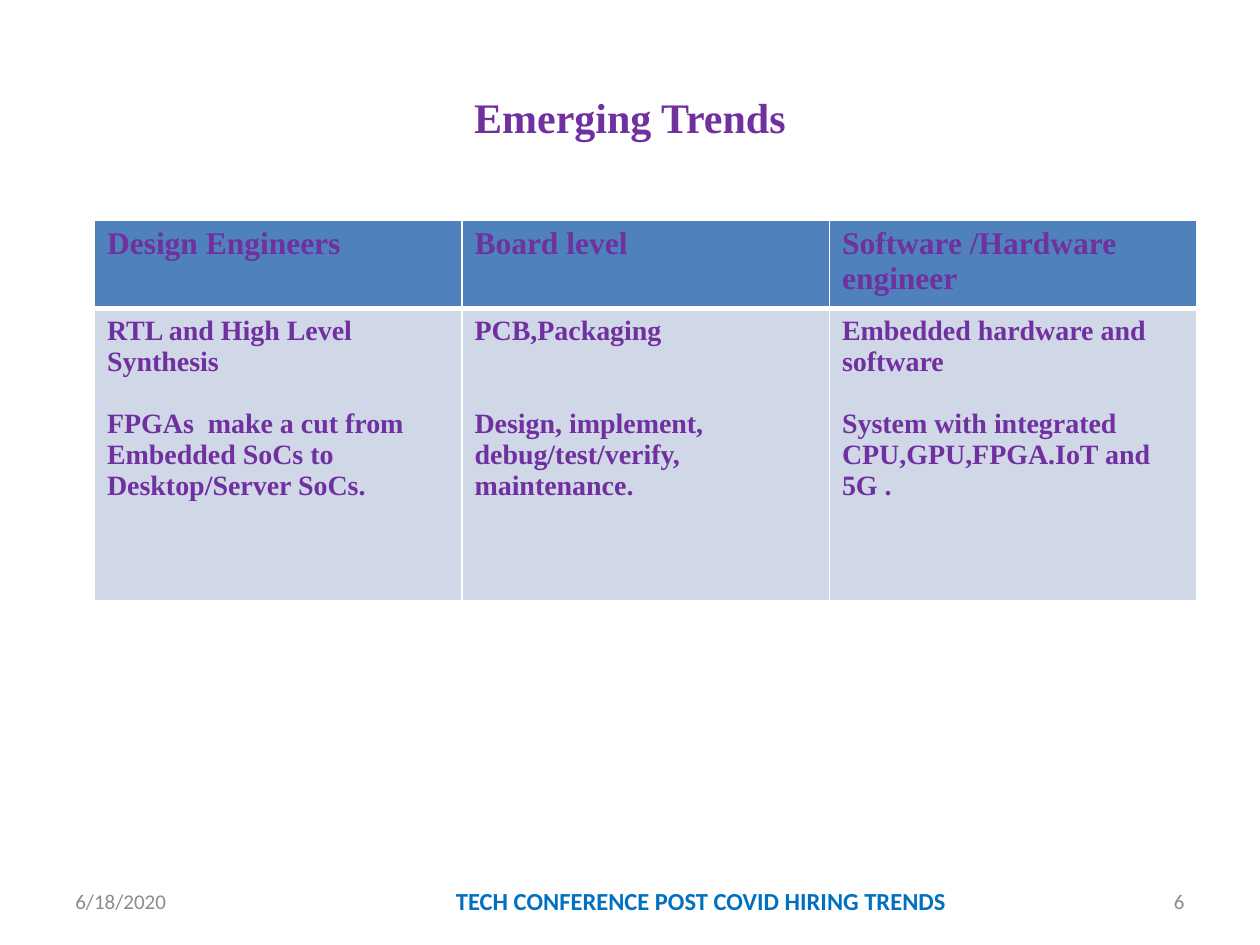
from lxml import etree
from pptx import Presentation
from pptx.dml.color import RGBColor
from pptx.enum.text import MSO_ANCHOR, PP_ALIGN
from pptx.oxml.ns import qn
from pptx.util import Inches, Pt

LEFT, CENTER, RIGHT = PP_ALIGN.LEFT, PP_ALIGN.CENTER, PP_ALIGN.RIGHT
MIDDLE = MSO_ANCHOR.MIDDLE
BLANK_LAYOUT = 6

COLORS = {
    "purple": "7030A0",
    "header": "4F81BD",
    "body": "D0D8E8",
    "border": "FFFFFF",
    "gray": "8C8C8C",
    "blue": "0070C0",
}

FORMATS = {
    "title": {"name": "Times New Roman", "size": Pt(24), "bold": True, "color": "purple"},
    "header": {"name": "Times New Roman", "size": Pt(18), "bold": True, "color": "purple"},
    "body": {"name": "Times New Roman", "size": Pt(16), "bold": True, "color": "purple"},
    "footer": {"name": "Calibri", "size": Pt(12), "bold": False, "color": "gray"},
    "event": {"name": "Calibri", "size": Pt(14), "bold": True, "color": "blue"},
}

# Each column: heading, first topic, second topic, lines of space between topics
BODY_LINE = 17.7
COLUMNS = [
    ("Design Engineers", "RTL and High Level Synthesis",
     "FPGAs  make a cut from Embedded SoCs to Desktop/Server SoCs.", 1),
    ("Board level", "PCB,Packaging",
     "Design, implement, debug/test/verify, maintenance.", 2),
    ("Software /Hardware engineer", "Embedded hardware and software",
     "System with integrated CPU,GPU,FPGA.IoT and 5G .", 1),
]
ROW_HEIGHTS = (0.66, 2.32)
THIN, THICK = 1, 3


def rgb(color):
    return RGBColor.from_string(COLORS[color])


def write_text(paragraph, text, style):
    run = paragraph.add_run()
    run.text = text
    for attribute, value in FORMATS[style].items():
        if attribute == "color":
            run.font.color.rgb = rgb(value)
        else:
            setattr(run.font, attribute, value)


def add_text(slide, box, text, style, alignment):
    shape = slide.shapes.add_textbox(*(Inches(length) for length in box))
    frame = shape.text_frame
    frame.word_wrap = True
    frame.vertical_anchor = MIDDLE
    paragraph = frame.paragraphs[0]
    paragraph.alignment = alignment
    write_text(paragraph, text, style)


def set_borders(cell, top_width, bottom_width):
    properties = cell._tc.get_or_add_tcPr()
    widths = {"a:lnL": THIN, "a:lnR": THIN, "a:lnT": top_width, "a:lnB": bottom_width}
    for position, (tag, width) in enumerate(widths.items()):
        line = etree.Element(qn(tag), w=str(Pt(width)))
        fill = etree.SubElement(line, qn("a:solidFill"))
        etree.SubElement(fill, qn("a:srgbClr"), val=COLORS["border"])
        properties.insert(position, line)


def fill_cell(cell, texts, style, gap=0):
    cell.fill.solid()
    cell.fill.fore_color.rgb = rgb(style)
    frame = cell.text_frame
    for index, text in enumerate(texts):
        paragraph = frame.add_paragraph() if index else frame.paragraphs[0]
        if index:
            paragraph.space_before = Pt(gap)
        write_text(paragraph, text, style)


def add_trends_table(slide):
    frame = slide.shapes.add_table(
        len(ROW_HEIGHTS), len(COLUMNS),
        Inches(0.75), Inches(1.75), Inches(8.75), Inches(sum(ROW_HEIGHTS)))
    table = frame.table
    for row, height in zip(table.rows, ROW_HEIGHTS):
        row.height = Inches(height)
    for index, (heading, first, second, gap_lines) in enumerate(COLUMNS):
        header_cell, body_cell = table.cell(0, index), table.cell(1, index)
        fill_cell(header_cell, [heading], "header")
        fill_cell(body_cell, [first, second], "body", gap_lines * BODY_LINE)
        # Both rows share the thick rule under the headings
        set_borders(header_cell, THIN, THICK)
        set_borders(body_cell, THICK, THIN)


def main():
    presentation = Presentation()
    presentation.slide_width = Inches(10)
    presentation.slide_height = Inches(7.5)
    slide = presentation.slides.add_slide(presentation.slide_layouts[BLANK_LAYOUT])

    # Title and table
    add_text(slide, (0.5, 0.3, 9, 1.25), "Emerging Trends", "title", CENTER)
    add_trends_table(slide)

    # Footer: date, page number, event
    add_text(slide, (0.5, 6.95, 2.33, 0.4), "6/18/2020", "footer", LEFT)
    add_text(slide, (7.17, 6.95, 2.33, 0.4), "6", "footer", RIGHT)
    add_text(slide, (3.4, 6.95, 4.33, 0.4),
             "TECH CONFERENCE POST COVID HIRING TRENDS", "event", CENTER)

    presentation.save("out.pptx")


if __name__ == "__main__":
    main()
